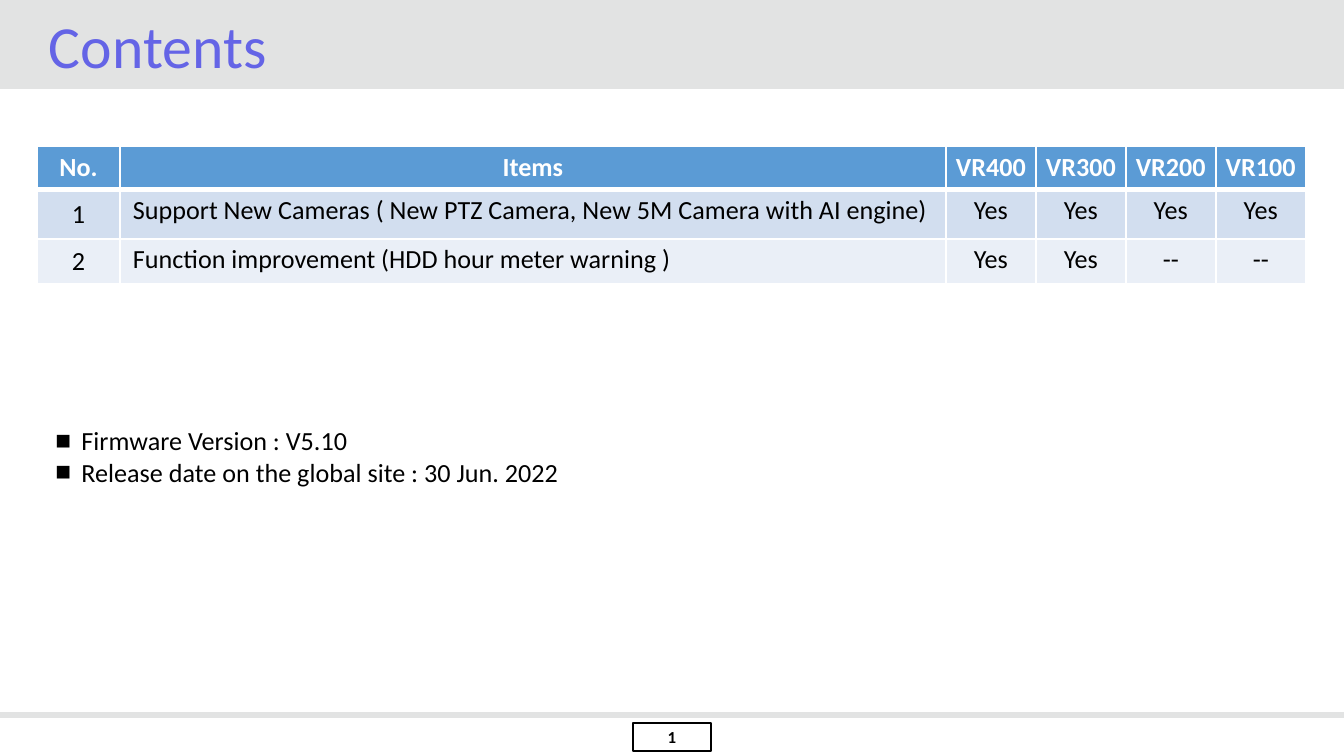
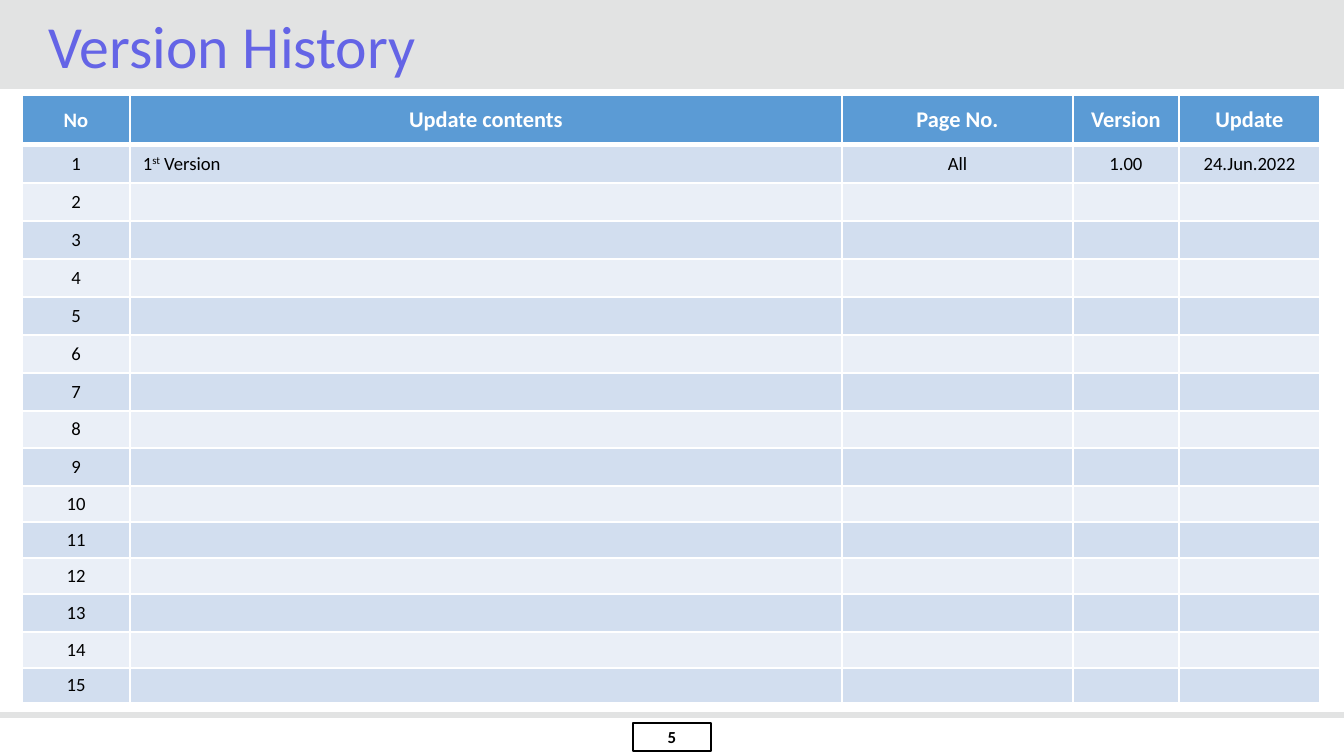
"""Build the firmware contents and version history slides."""
import dataclasses

import pptx
import pptx.dml.color
import pptx.enum.shapes
import pptx.enum.text
import pptx.oxml
import pptx.oxml.ns
import pptx.util

EMU_PER_PX = 914400 / 134.4
ALIGN = pptx.enum.text.PP_ALIGN
ANCHOR = pptx.enum.text.MSO_ANCHOR
SHAPE = pptx.enum.shapes.MSO_SHAPE


@dataclasses.dataclass(frozen=True)
class Theme:
    font: str = "Calibri"
    black: str = "000000"
    white: str = "FFFFFF"
    title: str = "6464E6"
    frame: str = "E2E3E3"
    header: str = "5B9BD5"
    stripes: tuple = ("D2DEEF", "EAEFF7")
    title_size: int = 32
    list_size: int = 14
    number_size: int = 9
    rule: int = 3
    hairline: int = 1


THEME = Theme()
SLIDE_SIZE = (1344, 756)
BAND = (0, 0, 1344, 89)
FOOTER_Y = 715
TITLE = (36, 1, 1255, 89)
NUMBER = (633, 723, 78, 28)

RELEASE_NOTES = (
    "Firmware Version : V5.10",
    "Release date on the global site : 30 Jun. 2022",
)
RELEASE_BOX = (42, 418, 997, 77)
MODELS = ["VR400", "VR300", "VR200", "VR100"]

CONTENTS = {
    "origin": (37, 146),
    "columns": [83, 826] + [90] * len(MODELS),
    "row_heights": [44, 49, 45],
    "rows": [
        ["No.", "Items"] + MODELS,
        ["1", "Support New Cameras ( New PTZ Camera, New 5M Camera with AI engine)"]
        + ["Yes"] * 4,
        ["2", "Function improvement (HDD hour meter warning )", "Yes", "Yes", "--", "--"],
    ],
    "header_sizes": [14] * 6,
    "body_size": 14,
    "body_anchor": ANCHOR.TOP,
    "tight_headers": MODELS,
}
HISTORY = {
    "origin": (22, 95),
    "columns": [108, 712, 231, 106, 141],
    "row_heights": [50] + [38] * 7 + [37, 38, 36, 36, 36, 38, 36, 35],
    "rows": [
        ["No", "Update contents", "Page No.", "Version", "Update"],
        ["1", ("1", "st", " Version"), "All", "1.00", "24.Jun.2022"],
    ] + [[str(number)] + [""] * 4 for number in range(2, 16)],
    "header_sizes": [11, 12, 12, 12, 12],
    "body_size": 10,
    "body_anchor": ANCHOR.MIDDLE,
    "tight_headers": [],
}


def px(length):
    return pptx.util.Emu(round(length * EMU_PER_PX))


def rgb(color):
    return pptx.dml.color.RGBColor.from_string(color)


def add_element(parent, tag, **attributes):
    element = parent.makeelement(pptx.oxml.ns.qn(tag), attributes)
    parent.append(element)
    return element


def place(shape, bounds):
    shape.left, shape.top, shape.width, shape.height = map(px, bounds)


def set_font(font, size, color, bold=False):
    font.name, font.size, font.bold = THEME.font, pptx.util.Pt(size), bold
    font.color.rgb = rgb(color)


def set_margins(target, left, top, right, bottom):
    target.margin_left, target.margin_top = px(left), px(top)
    target.margin_right, target.margin_bottom = px(right), px(bottom)


def add_frame(deck, page):
    """Draw the band and footer line, then hand them to the slide master."""
    band = page.shapes.add_shape(SHAPE.RECTANGLE, *map(px, BAND))
    band.shadow.inherit = False
    band.fill.solid()
    band.fill.fore_color.rgb = rgb(THEME.frame)
    band.line.fill.background()
    line = page.shapes.add_connector(
        pptx.enum.shapes.MSO_CONNECTOR.STRAIGHT,
        0, px(FOOTER_Y), px(SLIDE_SIZE[0]), px(FOOTER_Y))
    line.line.color.rgb = rgb(THEME.frame)
    line.line.width = pptx.util.Pt(THEME.rule)
    add_element(line._element.spPr, "a:effectLst")
    tree = deck.slide_master.shapes._spTree
    for offset, shape in enumerate((band, line)):
        shape._element.xpath("./*/p:cNvPr")[0].set("id", str(100 + offset))
        tree.insert(2 + offset, shape._element)


def add_title(page, text):
    title = page.shapes.title
    place(title, TITLE)
    frame = title.text_frame
    frame.text = text
    frame.word_wrap = True
    frame.auto_size = pptx.enum.text.MSO_AUTO_SIZE.NONE
    frame.vertical_anchor = ANCHOR.MIDDLE
    set_margins(frame, 13, 7, 13, 0)
    para = frame.paragraphs[0]
    para.alignment, para.line_spacing = ALIGN.LEFT, 0.9
    set_font(para.font, THEME.title_size, THEME.title)


def add_number(page, number):
    box = page.shapes.add_shape(SHAPE.RECTANGLE, *map(px, NUMBER))
    box.shadow.inherit = False
    box.fill.background()
    box.line.color.rgb = rgb(THEME.black)
    box.line.width = pptx.util.Pt(THEME.hairline)
    frame = box.text_frame
    frame.text = str(number)
    frame.vertical_anchor = ANCHOR.MIDDLE
    set_margins(frame, 4, 4, 4, 4)
    para = frame.paragraphs[0]
    para.alignment = ALIGN.CENTER
    set_font(para.font, THEME.number_size, THEME.black, bold=True)


def add_list(page, lines, bounds):
    body = page.placeholders[1]
    place(body, bounds)
    frame = body.text_frame
    frame.text = "\n".join(lines)
    frame.word_wrap = True
    frame.auto_size = pptx.enum.text.MSO_AUTO_SIZE.NONE
    for para in frame.paragraphs:
        properties = para._p.get_or_add_pPr()
        properties.set("marL", str(px(26)))
        properties.set("indent", str(-px(26)))
        add_element(properties, "a:buChar", char="■")
        para.space_before = pptx.util.Pt(0)
        set_font(para.font, THEME.list_size, THEME.black)


def set_borders(cell, row):
    properties = cell._tc.get_or_add_tcPr()
    thick_side = {0: "B", 1: "T"}.get(row)
    for side in "LRTB":
        points = THEME.rule if side == thick_side else THEME.hairline
        border = add_element(properties, f"a:ln{side}", w=str(pptx.util.Pt(points)))
        fill = add_element(border, "a:solidFill")
        add_element(fill, "a:srgbClr", val=THEME.white)


def fill_cell(cell, content, size, color, bold):
    para = cell.text_frame.paragraphs[0]
    spans = content if isinstance(content, tuple) else (content,)
    for position, text in enumerate(spans):
        if text:
            span = para.add_run()
            span.text = text
            if position == 1:
                span.font._element.set("baseline", "30000")
    set_font(para.font, size, color, bold)
    if not content:
        add_element(para._p, "a:endParaRPr", sz=str(size * 100))
    return para


def add_grid(page, grid):
    rows, columns, heights = grid["rows"], grid["columns"], grid["row_heights"]
    bounds = (*grid["origin"], sum(columns), sum(heights))
    table = page.shapes.add_table(len(rows), len(columns), *map(px, bounds)).table
    table.horz_banding = False
    for column, width in zip(table.columns, columns):
        column.width = px(width)
    for row, height in zip(table.rows, heights):
        row.height = px(height)
    for row, contents in enumerate(rows):
        header = row == 0
        for column, content in enumerate(contents):
            cell = table.cell(row, column)
            side = 0 if header and content in grid["tight_headers"] else 13
            set_margins(cell, side, 5, side, 5)
            middle = header or column == 0
            cell.vertical_anchor = ANCHOR.MIDDLE if middle else grid["body_anchor"]
            set_borders(cell, row)
            cell.fill.solid()
            color = THEME.header if header else THEME.stripes[(row - 1) % 2]
            cell.fill.fore_color.rgb = rgb(color)
            size = grid["header_sizes"][column] if header else grid["body_size"]
            text_color = THEME.white if header else THEME.black
            para = fill_cell(cell, content, size, text_color, header)
            para.alignment = ALIGN.LEFT if column == 1 and not header else ALIGN.CENTER


def add_page(deck, layout, title, number, grid):
    page = deck.slides.add_slide(deck.slide_layouts.get_by_name(layout))
    add_title(page, title)
    add_grid(page, grid)
    add_number(page, number)
    return page


def main():
    deck = pptx.Presentation()
    deck.slide_width, deck.slide_height = map(px, SLIDE_SIZE)
    contents = add_page(deck, "Title and Content", "Contents", 1, CONTENTS)
    add_list(contents, RELEASE_NOTES, RELEASE_BOX)
    add_frame(deck, contents)
    add_page(deck, "Title Only", "Version History", 5, HISTORY)
    deck.save("out.pptx")


if __name__ == "__main__":
    main()
